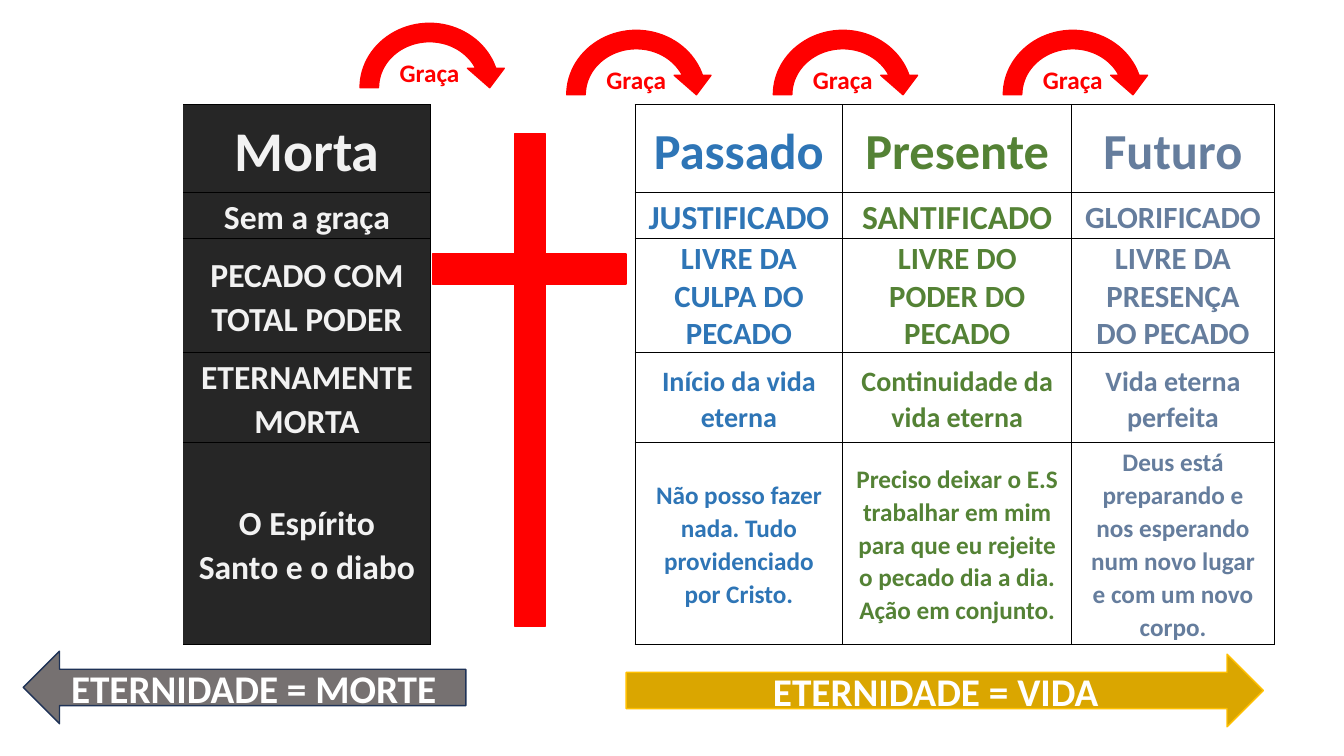
from lxml import etree
from pptx import Presentation
from pptx.dml.color import RGBColor
from pptx.enum.shapes import MSO_SHAPE as Preset
from pptx.enum.text import MSO_ANCHOR as Anchor, PP_ALIGN as Align
from pptx.oxml.ns import qn
from pptx.util import Inches, Pt

presentation = Presentation()
presentation.slide_width, presentation.slide_height = Inches(13.33), Inches(7.5)
slide = presentation.slides.add_slide(presentation.slide_layouts[6])

# Lengths are percentages of the slide's width (COL) and height (ROW)
COL, ROW = presentation.slide_width / 100, presentation.slide_height / 100
RED, WHITE, BLACK = "FF0000", "FFFFFF", "000000"


def color(hex_string):
    return RGBColor.from_string(hex_string)


def write(frame, text, size, hex_string):
    frame.word_wrap = True
    frame.vertical_anchor = Anchor.MIDDLE
    paragraph = frame.paragraphs[0]
    paragraph.text = text
    paragraph.alignment = Align.CENTER
    font_format = {"name": "Calibri", "size": Pt(size), "bold": True}
    for attribute, value in font_format.items():
        setattr(paragraph.runs[0].font, attribute, value)
    paragraph.runs[0].font.color.rgb = color(hex_string)
    return paragraph


# Table: one dark column, a gap for the cross, and three time columns
column_widths = [8.7, 18.38, 15.23, 15.45, 17.03, 15.08]
row_heights = [11.6, 5.2, 13.87, 9.6, 26.67]
text_columns = {1: "F2F2F2", 3: "2E75B6", 4: "548235", 5: "657D9D"}
rows = [
    (["Morta", "Passado", "Presente", "Futuro"], [40, 36, 36, 36]),
    (["Sem a graça", "JUSTIFICADO", "SANTIFICADO", "GLORIFICADO"], [24, 24, 24, 22]),
    (["PECADO COM TOTAL PODER", "LIVRE DA CULPA DO PECADO",
      "LIVRE DO PODER DO PECADO", "LIVRE DA PRESENÇA DO PECADO"], [24, 22, 22, 22]),
    (["ETERNAMENTE MORTA", "Início da vida eterna",
      "Continuidade da vida eterna", "Vida eterna perfeita"], [24, 20, 20, 20]),
    (["O Espírito Santo e o diabo",
      "Não posso fazer nada. Tudo providenciado por Cristo.",
      "Preciso deixar o E.S trabalhar em mim para que eu rejeite o pecado "
      "dia a dia. Ação em conjunto.",
      "Deus está preparando e nos esperando num novo lugar e com um novo corpo."],
     [24, 18, 18, 18]),
]
cell_margins = {"margin_left": Inches(0.12), "margin_right": Inches(0.12),
                "margin_top": Inches(0.02), "margin_bottom": 0}
table_shape = slide.shapes.add_table(
    len(rows), len(column_widths), int(4.95 * COL), int(13.87 * ROW),
    int(sum(column_widths) * COL), int(sum(row_heights) * ROW))
table = table_shape.table
table.first_row = table.horz_banding = False
for style in table_shape.element.iter(qn("a:tableStyleId")):
    style.text = "{2D5ABB26-0587-4C30-8999-92F81FD0307C}"
for column, width in zip(table.columns, column_widths):
    column.width = int(width * COL)
for row, height in zip(table.rows, row_heights):
    row.height = int(height * ROW)

for row_index, (texts, sizes) in enumerate(rows):
    for column_index, text, size in zip(text_columns, texts, sizes):
        cell = table.cell(row_index, column_index)
        for attribute, value in cell_margins.items():
            setattr(cell, attribute, value)
        paragraph = write(cell.text_frame, text, size, text_columns[column_index])
        cell.vertical_anchor = Anchor.MIDDLE
        if row_index != 2 or column_index == 1:
            paragraph.line_spacing = 1.07
            if text != "Passado":
                paragraph.space_after = Pt(8)

# Cell borders and fills
borders = {0: "", 1: "RTB", 2: "LR"}
for row_index in range(len(rows)):
    for column_index in range(len(column_widths)):
        cell = table.cell(row_index, column_index)
        properties = cell._tc.get_or_add_tcPr()
        for side in borders.get(column_index, "LRTB"):
            line = etree.SubElement(properties, qn(f"a:ln{side}"), w=str(Pt(1)))
            line_fill = etree.SubElement(line, qn("a:solidFill"))
            etree.SubElement(line_fill, qn("a:srgbClr"), val=BLACK)
        if column_index == 1:
            cell.fill.solid()
            cell.fill.fore_color.rgb = color("262626")
        else:
            cell.fill.background()

# Cross, grace arrows and eternity arrows: preset, place, fill, line, text, size, text colour
drawings = [
    (Preset.RECTANGLE, (38.26, 17.73, 2.33, 65.07), RED, RED, "", 0, RED),
    (Preset.RECTANGLE, (32.18, 33.6, 14.4, 4), RED, RED, "", 0, RED),
]
for left, top in [(26.11, 1.87), (41.49, 2.8), (56.86, 2.8), (73.97, 2.8)]:
    drawings.append((Preset.CIRCULAR_ARROW, (left, top, 11.7, 19.47),
                     RED, RED, "Graça", 18, RED))
drawings += [
    (Preset.LEFT_ARROW, (1.73, 86.13, 32.93, 9.6),
     "767171", "1E3256", "ETERNIDADE = MORTE", 28, WHITE),
    (Preset.RIGHT_ARROW, (46.59, 86.53, 47.41, 9.6),
     "DAA600", "FFC000", "ETERNIDADE = VIDA", 28, WHITE),
]
for preset, (left, top, width, height), fill, outline, text, size, text_color in drawings:
    shape = slide.shapes.add_shape(preset, int(left * COL), int(top * ROW),
                                   int(width * COL), int(height * ROW))
    shape.shadow.inherit = False
    shape.fill.solid()
    shape.fill.fore_color.rgb = color(fill)
    shape.line.color.rgb = color(outline)
    shape.line.width = Pt(1)
    if text:
        write(shape.text_frame, text, size, text_color)
    if preset == Preset.CIRCULAR_ARROW:
        shape.text_frame.margin_bottom = Inches(0.35)

presentation.save("out.pptx")
